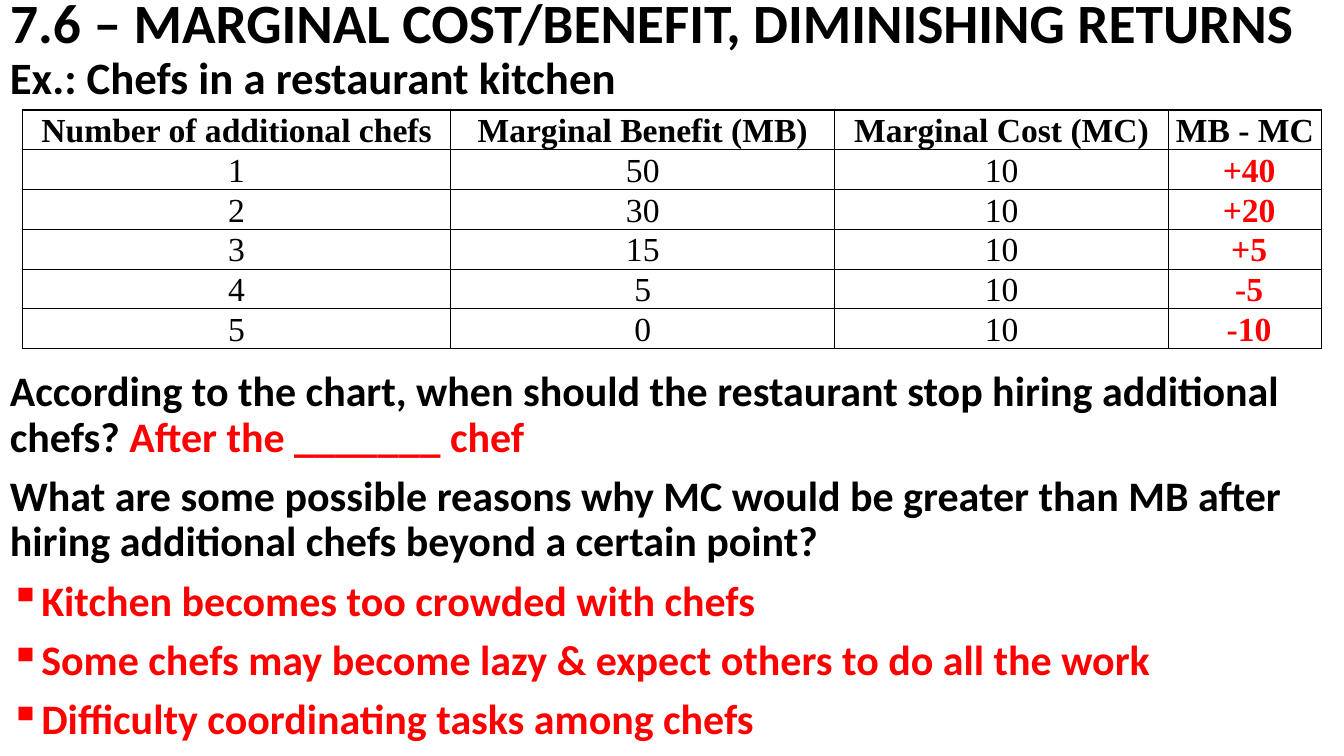
from lxml import etree
from pptx import Presentation
from pptx.dml.color import RGBColor
from pptx.enum.text import MSO_ANCHOR, MSO_AUTO_SIZE, PP_ALIGN
from pptx.oxml.ns import qn
from pptx.util import Pt

LEFT, CENTER = PP_ALIGN.LEFT, PP_ALIGN.CENTER
TOP, MIDDLE = MSO_ANCHOR.TOP, MSO_ANCHOR.MIDDLE
NO_AUTOFIT = MSO_AUTO_SIZE.NONE
BLACK = RGBColor(0, 0, 0)
RED = RGBColor(255, 0, 0)
BODY_FONT = "Calibri"
TABLE_FONT = "Times New Roman"

TITLE = "7.6 – MARGINAL COST/BENEFIT, DIMINISHING RETURNS"
EXAMPLE = "Ex.: Chefs in a restaurant kitchen"
HEADINGS = ("Number of additional chefs", "Marginal Benefit (MB)",
            "Marginal Cost (MC)", "MB - MC")
BENEFITS = (50, 30, 15, 5, 0)
COST = 10
QUESTIONS = [
    [("According to the chart, when should the restaurant stop hiring additional chefs? ", BLACK),
     ("After the _______ chef", RED)],
    [("What are some possible reasons why MC would be greater than MB "
      "after hiring additional chefs beyond a certain point?", BLACK)],
]
REASONS = [
    "Kitchen becomes too crowded with chefs",
    "Some chefs may become lazy & expect others to do all the work",
    "Difficulty coordinating tasks among chefs",
]

PAGE_WIDTH, PAGE_HEIGHT = 960, 540
TITLE_HEIGHT = 36
TABLE_LEFT, TABLE_TOP = 16, 78.6
COLUMN_WIDTHS = (306, 274.3, 238.3, 109.4)
ROW_HEIGHT = 28.4
QUESTIONS_TOP = 261
BULLET_INDENT = 18


def format_run(run, font, size, color, bold=True):
    run.font.name = font
    run.font.size = Pt(size)
    run.font.color.rgb = color
    run.font.bold = bold


def fill_paragraph(para, spans, size):
    para.alignment = LEFT
    para.line_spacing = 0.9
    para.space_before = Pt(10)
    for text, color in spans:
        run = para.add_run()
        run.text = text
        format_run(run, BODY_FONT, size, color)


def add_bullet(para):
    properties = para._p.get_or_add_pPr()
    properties.set("marL", str(Pt(BULLET_INDENT)))
    properties.set("indent", str(-Pt(BULLET_INDENT)))
    etree.SubElement(properties, qn("a:buChar"), char="▪")


def prepare_frame(frame, anchor):
    frame.word_wrap = True
    frame.auto_size = NO_AUTOFIT
    frame.vertical_anchor = anchor


def add_text(page, top, height, paragraphs, size):
    box = page.shapes.add_textbox(Pt(0), Pt(top), Pt(PAGE_WIDTH), Pt(height))
    frame = box.text_frame
    prepare_frame(frame, TOP)
    for index, spans in enumerate(paragraphs):
        para = frame.paragraphs[0] if index == 0 else frame.add_paragraph()
        fill_paragraph(para, spans, size)
    return frame


def add_borders(cell):
    properties = cell._tc.get_or_add_tcPr()
    for index, side in enumerate(("lnL", "lnR", "lnT", "lnB")):
        line = etree.Element(qn("a:" + side), w=str(Pt(1)))
        fill = etree.SubElement(line, qn("a:solidFill"))
        etree.SubElement(fill, qn("a:srgbClr"), val=str(BLACK))
        properties.insert(index, line)


def fill_cell(cell, text, color, bold, left_margin):
    cell.fill.background()
    cell.margin_left, cell.margin_right = Pt(left_margin), Pt(5)
    cell.margin_top = cell.margin_bottom = Pt(0)
    para = cell.text_frame.paragraphs[0]
    para.text = text
    para.alignment = CENTER
    para.line_spacing = 1.07
    format_run(para.runs[0], TABLE_FONT, 24, color, bold)
    add_borders(cell)


def add_chef_table(page):
    rows = [HEADINGS] + [
        (str(chef), str(benefit), str(COST), f"{benefit - COST:+d}")
        for chef, benefit in enumerate(BENEFITS, 1)
    ]
    table = page.shapes.add_table(
        len(rows), len(HEADINGS), Pt(TABLE_LEFT), Pt(TABLE_TOP),
        Pt(sum(COLUMN_WIDTHS)), Pt(ROW_HEIGHT * len(rows))).table
    table.first_row = table.horz_banding = False
    for column, width in zip(table.columns, COLUMN_WIDTHS):
        column.width = Pt(width)
    for row_index, values in enumerate(rows):
        table.rows[row_index].height = Pt(ROW_HEIGHT)
        for column_index, text in enumerate(values):
            is_heading = row_index == 0
            is_net = not is_heading and column_index == len(HEADINGS) - 1
            fill_cell(table.cell(row_index, column_index), text,
                      RED if is_net else BLACK, is_heading or is_net,
                      11 if is_net else 5)


def main():
    deck = Presentation()
    deck.slide_width, deck.slide_height = Pt(PAGE_WIDTH), Pt(PAGE_HEIGHT)
    page = deck.slides.add_slide(deck.slide_layouts[5])

    title = page.shapes.title
    title.left, title.top = Pt(0), Pt(0)
    title.width, title.height = Pt(PAGE_WIDTH), Pt(TITLE_HEIGHT)
    prepare_frame(title.text_frame, MIDDLE)
    fill_paragraph(title.text_frame.paragraphs[0], [(TITLE, BLACK)], 39.6)
    title.text_frame.paragraphs[0].space_before = Pt(0)

    add_text(page, TITLE_HEIGHT, 42, [[(EXAMPLE, BLACK)]], 32)
    add_chef_table(page)
    reasons = [[(reason, RED)] for reason in REASONS]
    frame = add_text(page, QUESTIONS_TOP, PAGE_HEIGHT - QUESTIONS_TOP,
                     QUESTIONS + reasons, 30)
    for para in frame.paragraphs[len(QUESTIONS):]:
        add_bullet(para)

    deck.save("out.pptx")


if __name__ == "__main__":
    main()
